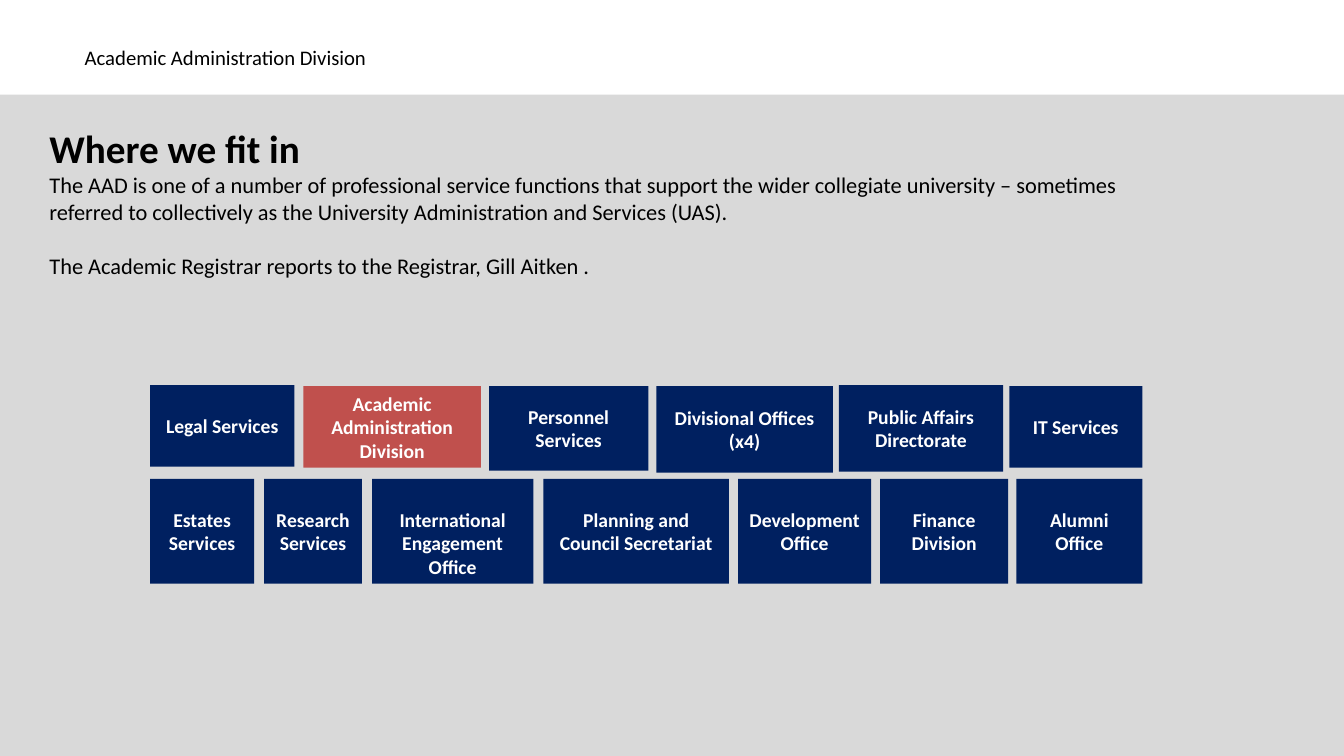
from dataclasses import dataclass

from lxml import etree
from pptx import Presentation
from pptx.dml.color import RGBColor
from pptx.enum import shapes as es, text as et
from pptx.oxml import ns
from pptx.util import Inches, Pt

NAVY, RED, GREY, WHITE, BLACK = "002060", "C0504D", "D9D9D9", "FFFFFF", "000000"
INSET = 0.05


@dataclass
class Unit:
    name: str
    left: float
    width: float
    top: float = 4.75
    height: float = 1.04
    fill: str = NAVY
    drop: float = 0


UNITS = [
    Unit("Legal Services", 1.49, 1.43, 3.82, 0.81),
    Unit("Academic Administration Division", 3.01, 1.76, 3.83, 0.81, RED),
    Unit("Personnel Services", 4.85, 1.58, 3.83, 0.84),
    Unit("Divisional Offices (x4)", 6.51, 1.75, 3.83, 0.86),
    Unit("Public Affairs Directorate", 8.32, 1.63, 3.82, 0.86),
    Unit("IT Services", 10.01, 1.32, 3.83, 0.81),
    Unit("Estates Services", 1.49, 1.03),
    Unit("Research Services", 2.62, 0.97),
    Unit("International Engagement Office", 3.69, 1.6, drop=0.23),
    Unit("Planning and Council Secretariat", 5.39, 1.84),
    Unit("Development Office", 7.32, 1.32),
    Unit("Finance Division", 8.73, 1.27),
    Unit("Alumni Office", 10.08, 1.25),
]


def paint(fmt, color: str) -> None:
    """Give a font or a solid fill its hex colour."""
    target = fmt.color if hasattr(fmt, "color") else fmt.fore_color
    target.rgb = RGBColor.from_string(color)


def style(par, size: float, color: str, bold: bool, align) -> None:
    par.alignment = align
    look = {"name": "Calibri", "size": Pt(size), "bold": bold}
    for key, value in look.items():
        setattr(par.font, key, value)
    paint(par.font, color)


def place(shape, left: float, top: float, width: float, height: float) -> None:
    spots = {"left": left, "top": top, "width": width, "height": height}
    for key, value in spots.items():
        setattr(shape, key, Inches(value))


def frame(shape, anchor):
    """Set up the text frame of a shape and return it."""
    box = shape.text_frame
    look = {"word_wrap": True, "auto_size": et.MSO_AUTO_SIZE.NONE,
            "vertical_anchor": anchor, "margin_top": Inches(INSET),
            "margin_bottom": Inches(INSET)}
    for key, value in look.items():
        setattr(box, key, value)
    return box


def block(slide, left: float, top: float, width: float, height: float, color: str):
    shape = slide.shapes.add_shape(
        es.MSO_SHAPE.RECTANGLE, *map(Inches, (left, top, width, height)))
    shape.shadow.inherit = False
    shape.fill.solid()
    paint(shape.fill, color)
    shape.line.fill.background()
    return shape


def draw(slide, unit: Unit) -> None:
    shape = block(slide, unit.left, unit.top, unit.width, unit.height, unit.fill)
    box = frame(shape, et.MSO_ANCHOR.MIDDLE)
    box.margin_top = Inches(INSET + unit.drop)
    box.text = unit.name
    style(box.paragraphs[0], 14, WHITE, True, et.PP_ALIGN.CENTER)


def intro(body) -> None:
    """Fill the body with a heading and two plain paragraphs."""
    place(body, 0.39, 1.18, 11.1, 1.65)
    box = frame(body, et.MSO_ANCHOR.TOP)
    lines = [
        ("Where we fit in", 28, 0),
        ("The AAD is one of a number of professional service functions that "
         "support the wider collegiate university – sometimes referred to "
         "collectively as the University Administration and Services (UAS).", 16, 0),
        ("The Academic Registrar reports to the Registrar, Gill Aitken .", 16, 19.2),
    ]
    box.text = "\n".join(line[0] for line in lines)
    for par, (_, size, gap) in zip(box.paragraphs, lines):
        par.space_before = Pt(gap)
        props = par._p.get_or_add_pPr()
        props.set("marL", "0")
        props.set("indent", "0")
        etree.SubElement(props, ns.qn("a:buNone"))
        style(par, size, BLACK, size == 28, et.PP_ALIGN.LEFT)


def main() -> None:
    deck = Presentation()
    deck.slide_width, deck.slide_height = Inches(13.33), Inches(7.5)
    slide = deck.slides.add_slide(deck.slide_layouts[1])
    title, body = slide.placeholders

    panel = block(slide, 0, 0.94, 13.33, 6.56, GREY)
    title._element.addprevious(panel._element)

    place(title, 0.74, 0.39, 7.78, 0.35)
    box = frame(title, et.MSO_ANCHOR.TOP)
    box.text = "Academic Administration Division"
    style(box.paragraphs[0], 14.8, BLACK, False, et.PP_ALIGN.LEFT)

    intro(body)
    for unit in UNITS:
        draw(slide, unit)
    deck.save("out.pptx")


if __name__ == "__main__":
    main()
